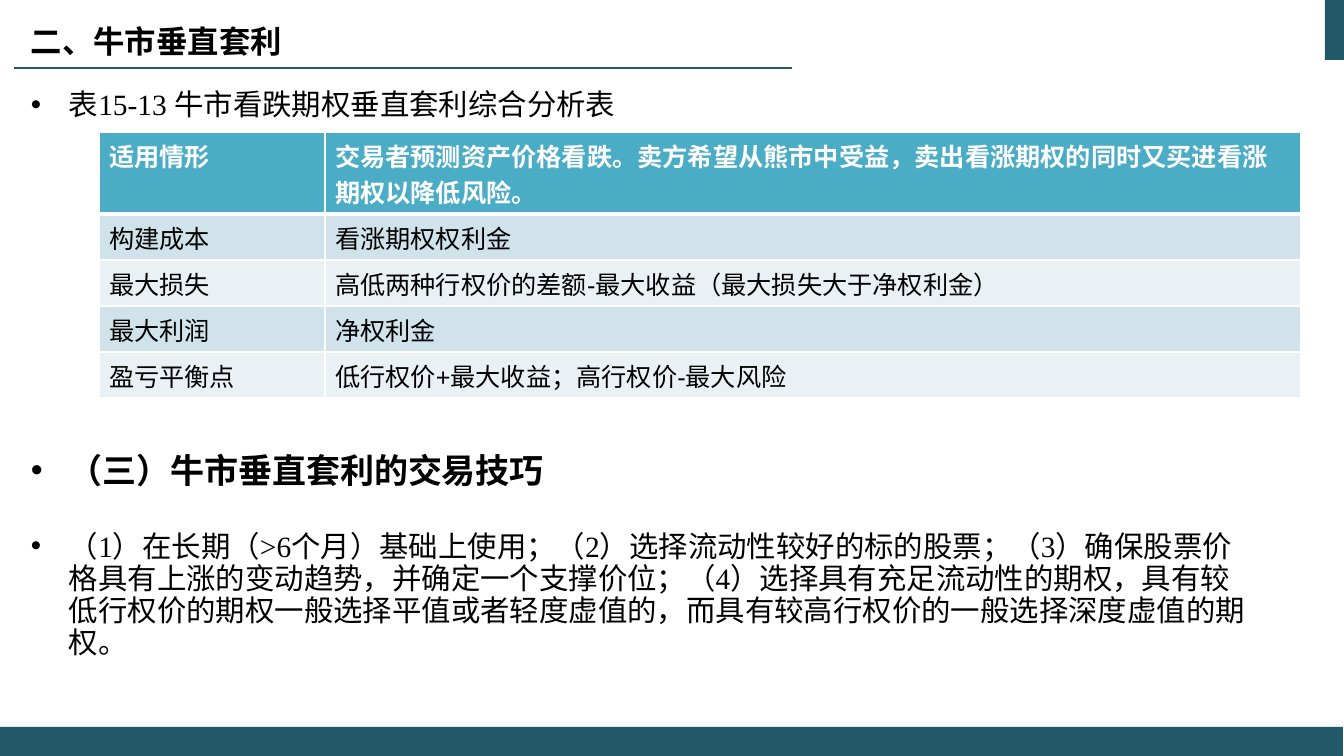
from dataclasses import dataclass

from lxml.etree import SubElement
from pptx import Presentation
from pptx.dml.color import RGBColor
from pptx.enum.shapes import MSO_CONNECTOR as Connector, MSO_SHAPE as Preset
from pptx.enum.text import MSO_ANCHOR as Anchor
from pptx.oxml.ns import qn
from pptx.util import Pt

EMU_PER_PX = 914400 / 100.8
COLORS = {"teal": "215968", "header": "4BACC6", "band_dark": "D0E3EA",
          "band_light": "E9F1F5", "white": "FFFFFF", "black": "000000"}
CJK_FONT = "Noto Sans CJK SC"
BULLET_INDENT = 38


@dataclass
class Band:
    left: int
    top: int
    width: int
    height: int


@dataclass
class Bullet:
    text: str
    size: float
    bold: bool
    space_before: int
    line_spacing: float


BANDS = [Band(1325, 0, 20, 60), Band(0, 727, 1343, 29)]
BULLETS = [
    Bullet("表15-13 牛市看跌期权垂直套利综合分析表", 21, False, 0, 0.9),
    Bullet("（三）牛市垂直套利的交易技巧", 24.3, True, 332, 0.9),
    Bullet("（1）在长期（>6个月）基础上使用；（2）选择流动性较好的标的股票；（3）确保股票价格具有上涨的变动趋势，"
           "并确定一个支撑价位；（4）选择具有充足流动性的期权，具有较低行权价的期权一般选择平值或者轻度虚值的，"
           "而具有较高行权价的一般选择深度虚值的期权。", 21, False, 41, 0.91),
]
COLUMN_WIDTHS = [226, 976]
HEADER_HEIGHT, ROW_HEIGHT = 82, 46
ROWS = [
    ("适用情形", "交易者预测资产价格看跌。卖方希望从熊市中受益，卖出看涨期权的同时又买进看涨期权以降低风险。"),
    ("构建成本", "看涨期权权利金"),
    ("最大损失", "高低两种行权价的差额-最大收益（最大损失大于净权利金）"),
    ("最大利润", "净权利金"),
    ("盈亏平衡点", "低行权价+最大收益；高行权价-最大风险"),
]


def px(length: int) -> int:
    return round(length * EMU_PER_PX)


def rgb(name: str) -> RGBColor:
    return RGBColor.from_string(COLORS[name])


def add_span(para, text: str, color: str = "black", **formats) -> None:
    span = para.add_run()
    span.text = text
    for name, value in formats.items():
        setattr(span.font, name, value)
    span.font.color.rgb = rgb(color)
    SubElement(span.font._element, qn("a:ea"), typeface=CJK_FONT)


def add_text_frame(page, left: int, top: int, width: int, height: int, anchor):
    box = page.shapes.add_textbox(px(left), px(top), px(width), px(height))
    frame = box.text_frame
    frame.word_wrap = True
    frame.vertical_anchor = anchor
    return frame


def draw_band(page, band: Band) -> None:
    shape = page.shapes.add_shape(Preset.RECTANGLE, px(band.left), px(band.top),
                                  px(band.width), px(band.height))
    shape.shadow.inherit = False
    shape.fill.solid()
    shape.fill.fore_color.rgb = rgb("teal")
    shape.line.fill.background()


def draw_title(page) -> None:
    rule = page.shapes.add_connector(Connector.STRAIGHT, px(792), px(68), px(14), px(68))
    rule.line.color.rgb = rgb("teal")
    rule.line.width = Pt(1.5)
    SubElement(rule._element.spPr, qn("a:effectLst"))
    frame = add_text_frame(page, 21, 13, 1097, 55, Anchor.MIDDLE)
    add_span(frame.paragraphs[0], "二、牛市垂直套利", name=CJK_FONT, size=Pt(22.4), bold=True)


def draw_bullets(page) -> None:
    frame = add_text_frame(page, 21, 85, 1247, 576, Anchor.TOP)
    for index, bullet in enumerate(BULLETS):
        para = frame.add_paragraph() if index else frame.paragraphs[0]
        properties = para._p.get_or_add_pPr()
        properties.set("marL", str(px(BULLET_INDENT)))
        properties.set("indent", str(-px(BULLET_INDENT)))
        SubElement(properties, qn("a:buFont"), typeface="Arial")
        SubElement(properties, qn("a:buChar"), char="•")
        para.line_spacing = bullet.line_spacing
        if index:
            para.space_before = px(bullet.space_before)
        add_span(para, bullet.text, name="Times New Roman", size=Pt(bullet.size), bold=bullet.bold)


def set_borders(cell, widths: dict[str, float]) -> None:
    """Put white borders ahead of the cell's fill, as the schema orders them."""
    properties = cell._tc.get_or_add_tcPr()
    for position, (side, width) in enumerate(widths.items()):
        border = SubElement(properties, qn(f"a:{side}"), w=str(Pt(width)))
        fill = SubElement(border, qn("a:solidFill"))
        SubElement(fill, qn("a:srgbClr"), val=COLORS["white"])
        properties.insert(position, border)


def draw_table(page) -> None:
    height = HEADER_HEIGHT + ROW_HEIGHT * (len(ROWS) - 1)
    table = page.shapes.add_table(len(ROWS), len(COLUMN_WIDTHS), px(99), px(132),
                                  px(sum(COLUMN_WIDTHS)), px(height)).table
    for column, width in zip(table.columns, COLUMN_WIDTHS):
        column.width = px(width)
    for row_index, texts in enumerate(ROWS):
        is_header = row_index == 0
        table.rows[row_index].height = px(HEADER_HEIGHT if is_header else ROW_HEIGHT)
        band = "header" if is_header else ("band_light", "band_dark")[row_index % 2]
        for column_index, text in enumerate(texts):
            cell = table.cell(row_index, column_index)
            cell.fill.solid()
            cell.fill.fore_color.rgb = rgb(band)
            set_borders(cell, {"lnL": 1, "lnR": 1, "lnT": 3 if row_index == 1 else 1,
                               "lnB": 3 if is_header else 1})
            add_span(cell.text_frame.paragraphs[0], text, "white" if is_header else "black",
                     name="Arial", size=Pt(18), bold=is_header)


def main() -> None:
    deck = Presentation()
    deck.slide_width, deck.slide_height = px(1344), px(756)
    page = deck.slides.add_slide(deck.slide_layouts[6])
    for band in BANDS:
        draw_band(page, band)
    draw_bullets(page)
    draw_table(page)
    draw_title(page)
    deck.save("out.pptx")


if __name__ == "__main__":
    main()
